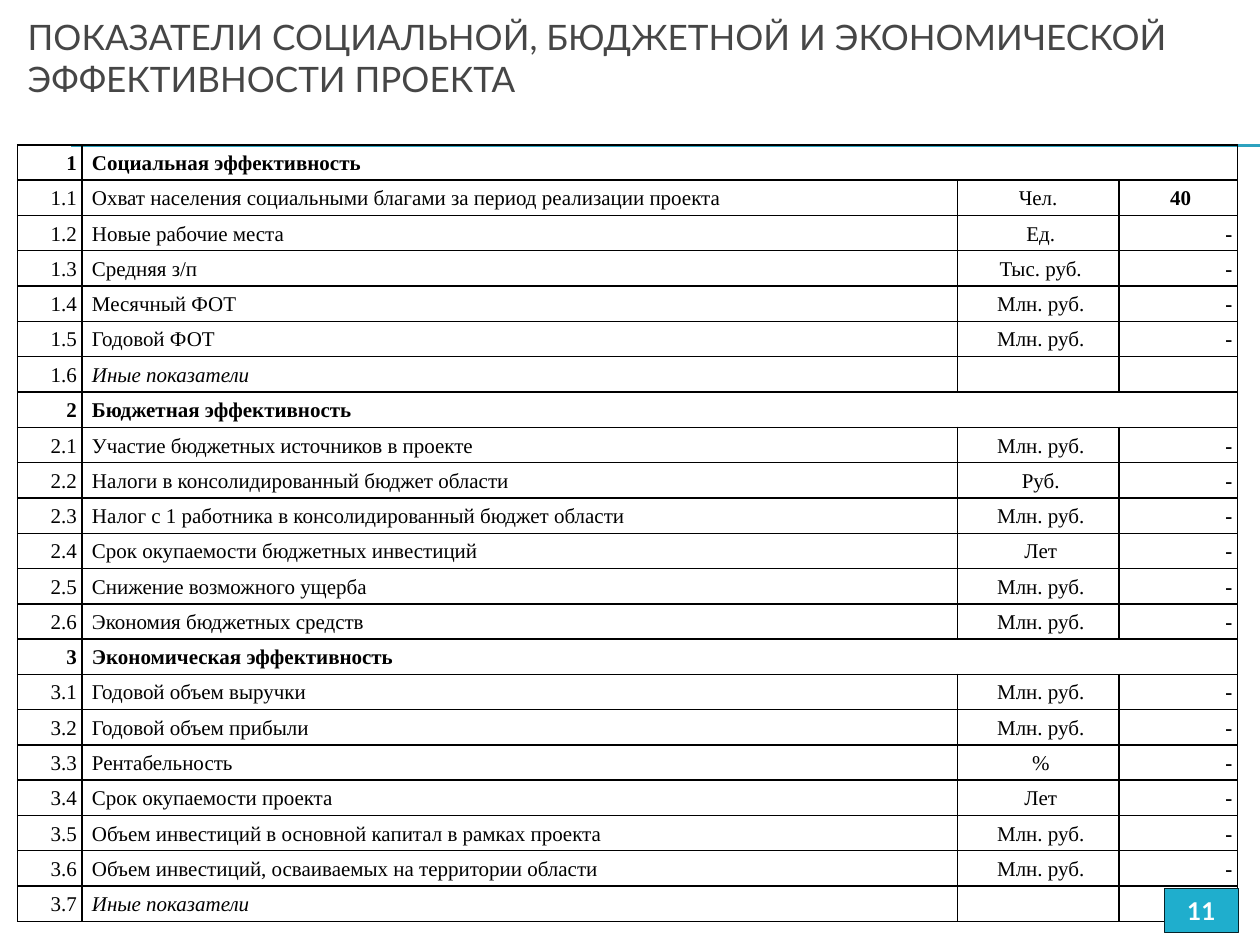
"""Builds a slide with a table of social, budget and economic project indicators."""
from lxml.etree import SubElement
from pptx import Presentation
from pptx.dml.color import RGBColor
from pptx.enum.shapes import MSO_CONNECTOR, MSO_SHAPE
from pptx.enum.text import MSO_ANCHOR, PP_ALIGN
from pptx.oxml import parse_xml
from pptx.oxml.ns import nsdecls, qn
from pptx.util import Inches, Pt

COLORS = {"title": "464646", "rule": "2DA2BF", "ink": "000000",
          "badge": "1FAECD", "badge_edge": "062329", "badge_text": "FFFFFF"}
SECTIONS = [
    ("Социальная эффективность", [
        ("Охват населения социальными благами за период реализации проекта", "Чел. ", "40"),
        ("Новые рабочие места", "Ед.", "-"),
        ("Средняя з/п", "Тыс. руб.", "-"),
        ("Месячный ФОТ", "Млн. руб.", "-"),
        ("Годовой ФОТ", "Млн. руб.", "-"),
        ("Иные показатели", "", ""),
    ]),
    ("Бюджетная эффективность", [
        ("Участие бюджетных источников в проекте", "Млн. руб.", "-"),
        ("Налоги в консолидированный бюджет области", "Руб.", "-"),
        ("Налог с 1 работника в консолидированный бюджет области", "Млн. руб.", "-"),
        ("Срок окупаемости бюджетных инвестиций", "Лет", "-"),
        ("Снижение возможного ущерба", "Млн. руб.", "-"),
        ("Экономия бюджетных средств", "Млн. руб.", "-"),
    ]),
    ("Экономическая эффективность", [
        ("Годовой объем выручки", "Млн. руб.", "-"),
        ("Годовой объем прибыли", "Млн. руб.", "-"),
        ("Рентабельность", "%", "-"),
        ("Срок окупаемости проекта", "Лет", "-"),
        ("Объем инвестиций в основной капитал в рамках проекта", "Млн. руб.", "-"),
        ("Объем инвестиций, осваиваемых на территории области", "Млн. руб.", "-"),
        ("Иные показатели", "", ""),
    ]),
]
COLUMN_WIDTHS = [0.51, 6.95, 1.28, 0.94]
ROW_HEIGHT = 0.2


def add_run(paragraph, text, font_name, size, color, bold=False, italic=False):
    run = paragraph.add_run()
    run.text = text
    run.font.name = font_name
    run.font.size = Pt(size)
    run.font.color.rgb = RGBColor.from_string(COLORS[color])
    run.font.bold = bold
    run.font.italic = italic


def style_cell(cell):
    cell.margin_left = Inches(0.08)
    cell.margin_right = cell.margin_top = cell.margin_bottom = Inches(0.04)
    properties = cell._tc.get_or_add_tcPr()
    for side in ("lnL", "lnR", "lnT", "lnB"):
        properties.append(parse_xml(
            f'<a:{side} {nsdecls("a")} w="{Pt(1)}"><a:solidFill>'
            f'<a:srgbClr val="{COLORS["ink"]}"/></a:solidFill></a:{side}>'))
    cell.fill.background()


presentation = Presentation()
presentation.slide_width = Inches(10)
presentation.slide_height = Inches(7.5)
slide = presentation.slides.add_slide(presentation.slide_layouts[5])

for rule_top in (1.15, 1.16):
    rule = slide.shapes.add_connector(
        MSO_CONNECTOR.STRAIGHT, Inches(0.56), Inches(rule_top), Inches(10), Inches(rule_top))
    rule.line.color.rgb = RGBColor.from_string(COLORS["rule"])
    rule.line.width = Pt(0.75)
    SubElement(rule._element.spPr, qn("a:effectLst"))

title = slide.shapes.title
title.left, title.top = Inches(0.12), Inches(0.29)
title.width, title.height = Inches(9.72), Inches(0.63)
title.text_frame.word_wrap = True
title.text_frame.vertical_anchor = MSO_ANCHOR.MIDDLE
title.text_frame.margin_bottom = Inches(0.34)
heading = title.text_frame.paragraphs[0]
heading.alignment = PP_ALIGN.LEFT
add_run(heading, "ПОКАЗАТЕЛИ СОЦИАЛЬНОЙ, БЮДЖЕТНОЙ И ЭКОНОМИЧЕСКОЙ ЭФФЕКТИВНОСТИ ПРОЕКТА",
        "Lato", 20, "title")

rows = []
for section_number, (section, indicators) in enumerate(SECTIONS, 1):
    rows.append((str(section_number), section, None, None))
    for number, indicator in enumerate(indicators, 1):
        rows.append((f"{section_number}.{number}", *indicator))

indicator_table = slide.shapes.add_table(
    len(rows), len(COLUMN_WIDTHS), Inches(0.14), Inches(1.15),
    Inches(sum(COLUMN_WIDTHS)), Inches(ROW_HEIGHT * len(rows))).table
indicator_table.first_row = indicator_table.horz_banding = False
for column, width in zip(indicator_table.columns, COLUMN_WIDTHS):
    column.width = Inches(width)

alignments = [PP_ALIGN.RIGHT, PP_ALIGN.LEFT, PP_ALIGN.CENTER, PP_ALIGN.RIGHT]
for row_index, row in enumerate(rows):
    indicator_table.rows[row_index].height = Inches(ROW_HEIGHT)
    is_section = row[2] is None
    for column_index, text in enumerate(row):
        cell = indicator_table.cell(row_index, column_index)
        style_cell(cell)
        paragraph = cell.text_frame.paragraphs[0]
        paragraph.alignment = PP_ALIGN.CENTER if text == "40" else alignments[column_index]
        paragraph.line_spacing = Pt(14.4)
        paragraph.font.size = Pt(12)
        if text:
            add_run(paragraph, text, "Times New Roman", 12, "ink",
                    bold=is_section or column_index == 3, italic=text == "Иные показатели")
    if is_section:
        indicator_table.cell(row_index, 1).merge(indicator_table.cell(row_index, 3))

page_badge = slide.shapes.add_shape(
    MSO_SHAPE.RECTANGLE, Inches(9.24), Inches(7.05), Inches(0.59), Inches(0.35))
page_badge.shadow.inherit = False
page_badge.fill.solid()
page_badge.fill.fore_color.rgb = RGBColor.from_string(COLORS["badge"])
page_badge.line.color.rgb = RGBColor.from_string(COLORS["badge_edge"])
page_badge.line.width = Pt(0.75)
page_badge.text_frame.vertical_anchor = MSO_ANCHOR.MIDDLE
page_number = page_badge.text_frame.paragraphs[0]
page_number.alignment = PP_ALIGN.CENTER
add_run(page_number, "11", "Lato", 14, "badge_text", bold=True)

presentation.save("out.pptx")
